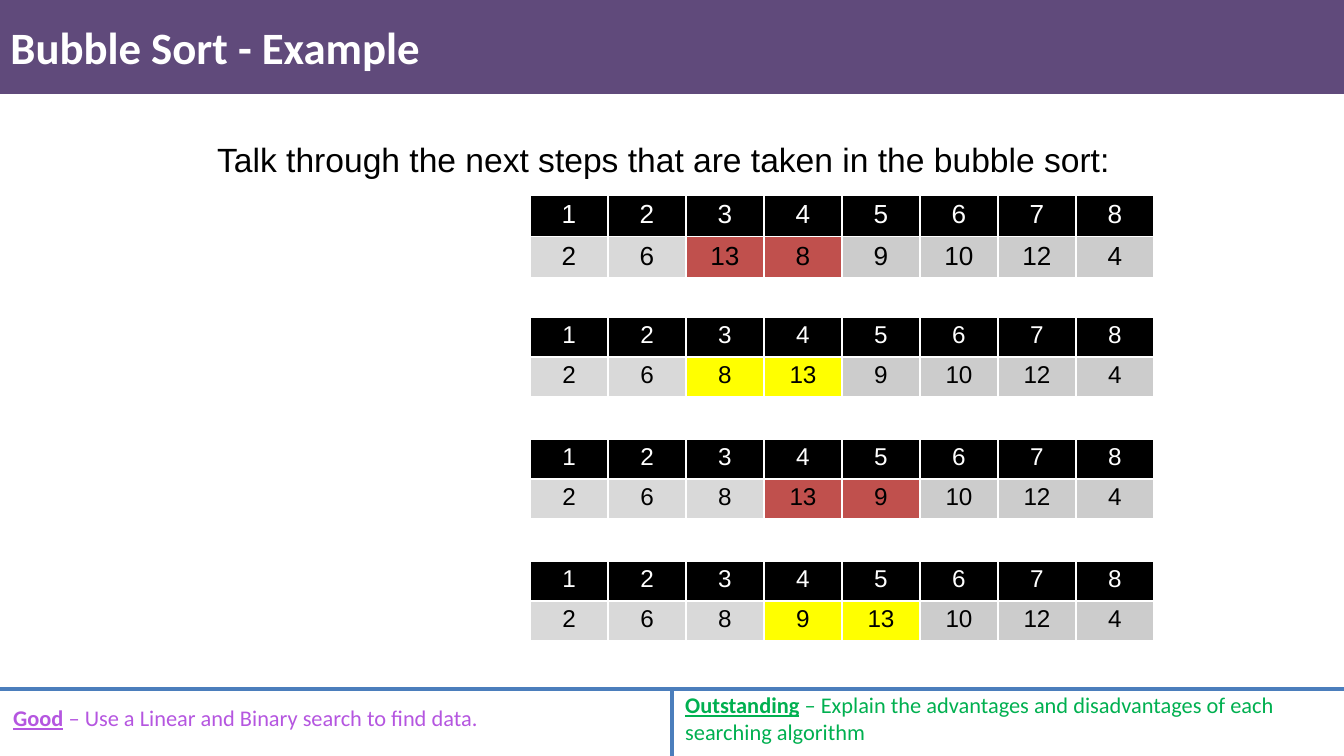
from pptx import Presentation
from pptx.dml.color import RGBColor
from pptx.enum.shapes import MSO_CONNECTOR, MSO_SHAPE
from pptx.enum.text import MSO_ANCHOR, PP_ALIGN
from pptx.oxml.ns import qn
from pptx.util import Pt
from lxml import etree

RECT = MSO_SHAPE.RECTANGLE
LINE = MSO_CONNECTOR.STRAIGHT
MIDDLE = MSO_ANCHOR.MIDDLE
LEFT = PP_ALIGN.LEFT
CENTER = PP_ALIGN.CENTER

WHITE = RGBColor(0xFF, 0xFF, 0xFF)
BLACK = RGBColor(0x00, 0x00, 0x00)
PURPLE = RGBColor(0x60, 0x4A, 0x7B)
VIOLET = RGBColor(0xB5, 0x56, 0xE0)
GREEN = RGBColor(0x00, 0xB0, 0x50)
BLUE = RGBColor(0x4B, 0x7E, 0xBC)
RED = RGBColor(0xC0, 0x50, 0x4D)
YELLOW = RGBColor(0xFF, 0xFF, 0x00)
PALE = RGBColor(0xD9, 0xD9, 0xD9)
GRAY = RGBColor(0xCC, 0xCC, 0xCC)

WIDTH, HEIGHT = 1344, 756
STEPS = [
    ([2, 6, 13, 8, 9, 10, 12, 4], (2, 3), RED, 41, 14),
    ([2, 6, 8, 13, 9, 10, 12, 4], (2, 3), YELLOW, 40, 13),
    ([2, 6, 8, 13, 9, 10, 12, 4], (3, 4), RED, 40, 13),
    ([2, 6, 8, 9, 13, 10, 12, 4], (3, 4), YELLOW, 40, 13),
]


def px(*values):
    """Turn lengths in px into EMU."""
    return [round(value * 9144000 / WIDTH) for value in values]


def style(para, name, size, color, bold=False):
    """Set the font of a paragraph."""
    font = para.font
    font.name, font.size, font.bold = name, Pt(size), bold
    font.color.rgb = color


def add_line(slide, *ends):
    """Draw a plain blue line."""
    line = slide.shapes.add_connector(LINE, *px(*ends))
    line.line.color.rgb = BLUE
    line.line.width = Pt(2.25)
    etree.SubElement(line._element.spPr, qn("a:effectLst"))


def add_box(slide, x, y, w, h, wrap):
    """Add a text box and return its first paragraph."""
    frame = slide.shapes.add_textbox(*px(x, y, w, h)).text_frame
    frame.word_wrap = wrap
    return frame.paragraphs[0]


def add_header(slide, x, y, w, h, text):
    """Place the title on a purple band."""
    band = slide.shapes.add_shape(RECT, *px(x, y, w, h))
    band.shadow.inherit = False
    band.fill.solid()
    band.fill.fore_color.rgb = PURPLE
    band.line.fill.background()
    title = slide.shapes.title
    title.left, title.top, title.width, title.height = px(x - 3, y + 11, w, 71)
    title._element.addprevious(band._element)
    title.text = text
    title.text_frame.vertical_anchor = MIDDLE
    para = title.text_frame.paragraphs[0]
    para.alignment = LEFT
    style(para, "Calibri", 24, WHITE, True)


def add_goal(slide, x, y, w, h, level, text, color):
    """Write a goal after its underlined level."""
    para = add_box(slide, x, y, w, h, True)
    style(para, "Calibri", 12, color)
    head = para.add_run()
    head.text = level
    head.font.bold = head.font.underline = True
    para.add_run().text = f" – {text}"


def add_footer(slide, x, y, w, h):
    """Place the ruled footer with both goals."""
    mid = x + w // 2
    add_line(slide, x, y, x + w, y)
    add_line(slide, mid, y, mid, y + h)
    add_goal(slide, x, y + 9, 661, 40, "Good",
             "Use a Linear and Binary search to find data.", VIOLET)
    add_goal(slide, mid, y - 4, 656, 67, "Outstanding",
             "Explain the advantages and disadvantages of each searching algorithm",
             GREEN)


def add_border(cell):
    """Give a cell thin white sides."""
    props = cell._tc.get_or_add_tcPr()
    for index, side in enumerate(("lnL", "lnR", "lnT", "lnB")):
        edge = etree.Element(qn(f"a:{side}"), w=str(Pt(1)))
        fill = etree.SubElement(edge, qn("a:solidFill"))
        etree.SubElement(fill, qn("a:srgbClr"), val=str(WHITE))
        props.insert(index, edge)


def fill_cell(cell, value, size, ink, fill):
    """Write one number in a coloured cell."""
    cell.text = str(value)
    cell.margin_left, cell.margin_right = px(9, 9)
    cell.margin_top, cell.margin_bottom = px(5, 5)
    cell.fill.solid()
    cell.fill.fore_color.rgb = fill
    add_border(cell)
    para = cell.text_frame.paragraphs[0]
    para.alignment = CENTER
    style(para, "Arial", size, ink)


def add_step(slide, x, y, w, values, pair, mark, row, size):
    """Show one state of the list with its compared pair."""
    count = len(values)
    table = slide.shapes.add_table(2, count, *px(x, y, w, 2 * row)).table
    for line in table.rows:
        line.height = px(row)[0]
    for col, value in enumerate(values):
        shade = mark if col in pair else PALE if col < pair[0] else GRAY
        fill_cell(table.cell(0, col), col + 1, size, WHITE, BLACK)
        fill_cell(table.cell(1, col), value, size, BLACK, shade)


def add_steps(slide, x, y, w, pitch):
    """Stack the steps at an equal pitch."""
    for index, step in enumerate(STEPS):
        add_step(slide, x, y + index * pitch, w, *step)


def add_prompt(slide, x, y, w, h, text):
    """Write the task above the steps."""
    para = add_box(slide, x, y, w, h, False)
    para.text = text
    style(para, "Arial", 18, BLACK)


def main():
    """Build and save the slide."""
    deck = Presentation()
    deck.slide_width, deck.slide_height = px(WIDTH, HEIGHT)
    slide = deck.slides.add_slide(deck.slide_layouts[5])
    add_header(slide, 0, 0, WIDTH, 94, "Bubble Sort - Example")
    add_footer(slide, 0, 689, WIDTH, HEIGHT - 689)
    add_steps(slide, 530, 195, 624, 122)
    add_prompt(slide, 204, 132, 929, 54,
               "Talk through the next steps that are taken in the bubble sort:")
    deck.save("out.pptx")


if __name__ == "__main__":
    main()
